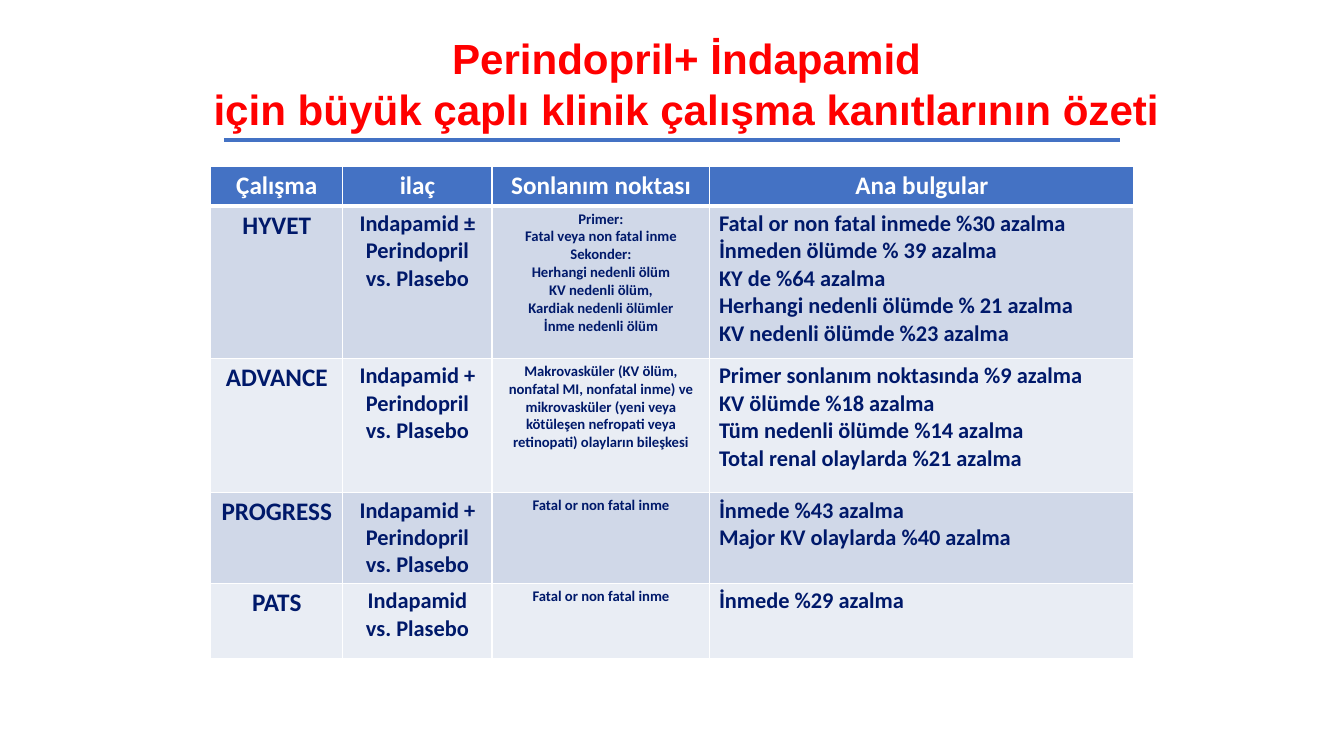
from lxml import etree
from pptx import Presentation, util as u
from pptx.dml.color import RGBColor
from pptx.enum import shapes, text
from pptx.oxml.ns import qn

TITLE = ["Perindopril+ İndapamid", "için büyük çaplı klinik çalışma kanıtlarının özeti"]
HEADER = ["Çalışma", "ilaç", "Sonlanım noktası", "Ana bulgular"]
STUDIES = [
    (["HYVET"],
     ["Indapamid ± Perindopril", "vs. Plasebo"],
     ["Primer:", "Fatal veya non fatal inme", "Sekonder:", "Herhangi nedenli ölüm",
      "KV nedenli ölüm,", "Kardiak nedenli ölümler", "İnme nedenli ölüm"],
     ["Fatal or non fatal inmede %30 azalma", "İnmeden ölümde % 39 azalma",
      "KY de %64 azalma", "Herhangi nedenli ölümde % 21 azalma",
      "KV nedenli ölümde %23 azalma"]),
    (["ADVANCE"],
     ["Indapamid + Perindopril", "vs. Plasebo"],
     ["Makrovasküler (KV ölüm, nonfatal MI, nonfatal inme) ve mikrovasküler "
      "(yeni veya kötüleşen nefropati veya retinopati) olayların bileşkesi"],
     ["Primer sonlanım noktasında %9 azalma", "KV ölümde %18 azalma",
      "Tüm nedenli ölümde %14 azalma", "Total renal olaylarda %21 azalma"]),
    (["PROGRESS"],
     ["Indapamid + Perindopril", "vs. Plasebo"],
     ["Fatal or non fatal inme"],
     ["İnmede %43 azalma", "Major KV olaylarda %40 azalma"]),
    (["PATS"],
     ["Indapamid", "vs. Plasebo"],
     ["Fatal or non fatal inme"],
     ["İnmede %29 azalma"]),
]
COLORS = {"title": "FF0000", "accent": "4472C4", "white": "FFFFFF",
          "navy": "00196A", "odd": "D0D8E8", "even": "E9EDF4"}
COLUMN_WIDTHS = [3.33, 3.76, 5.49, 10.69]
ROW_HEIGHTS = [0.99, 3.84, 3.38, 2.21, 1.91]
BODY_SIZES = [18, 16, 10.5, 16]
CENTER, LEFT = text.PP_ALIGN.CENTER, text.PP_ALIGN.LEFT


def color(name):
    return RGBColor.from_string(COLORS[name])


def write(frame, lines, size, font, ink, align):
    for number, line in enumerate(lines):
        para = frame.add_paragraph() if number else frame.paragraphs[0]
        para.alignment = align
        span = para.add_run()
        span.text = line
        formats = {"size": u.Pt(size), "name": font, "bold": True}
        for key, value in formats.items():
            setattr(span.font, key, value)
        span.font.color.rgb = color(ink)


def add_borders(cell, points):
    properties = cell._tc.get_or_add_tcPr()
    for place, (side, width) in enumerate(points.items()):
        line = etree.Element(qn(f"a:ln{side}"), w=str(u.Pt(width)))
        fill = etree.SubElement(line, qn("a:solidFill"))
        etree.SubElement(fill, qn("a:srgbClr"), val=COLORS["white"])
        properties.insert(place, line)


def add_title(page):
    box = page.shapes.title
    place = {"left": 4.7, "top": 0.69, "width": 25.22, "height": 2.82}
    for key, value in place.items():
        setattr(box, key, u.Cm(value))
    frame = box.text_frame
    frame.word_wrap = True
    frame.auto_size = text.MSO_AUTO_SIZE.NONE
    frame.vertical_anchor = text.MSO_ANCHOR.TOP
    write(frame, TITLE, 30.1, "Arial", "title", CENTER)


def add_rule(page):
    rule = page.shapes.add_connector(
        shapes.MSO_CONNECTOR.STRAIGHT, u.Cm(5.64), u.Cm(3.53), u.Cm(28.22), u.Cm(3.53))
    rule.line.color.rgb = color("accent")
    rule.line.width = u.Pt(3)
    etree.SubElement(rule._element.spPr, qn("a:effectLst"))


def add_studies(page):
    rows = [[[label] for label in HEADER], *STUDIES]
    table = page.shapes.add_table(
        len(rows), len(HEADER), u.Cm(5.31), u.Cm(4.19),
        u.Cm(sum(COLUMN_WIDTHS)), u.Cm(sum(ROW_HEIGHTS))).table
    for column, width in zip(table.columns, COLUMN_WIDTHS):
        column.width = u.Cm(width)
    margins = {"margin_left": 0.23, "margin_right": 0.23,
               "margin_top": 0.11, "margin_bottom": 0.11}
    for r, row in enumerate(rows):
        table.rows[r].height = u.Cm(ROW_HEIGHTS[r])
        shade = "accent" if r == 0 else "odd" if r % 2 else "even"
        borders = {"L": 1, "R": 1, "T": 3 if r == 1 else 1, "B": 3 if r == 0 else 1}
        for c, lines in enumerate(row):
            cell = table.cell(r, c)
            for key, value in margins.items():
                setattr(cell, key, u.Cm(value))
            cell.fill.solid()
            cell.fill.fore_color.rgb = color(shade)
            add_borders(cell, borders)
            write(cell.text_frame, lines, BODY_SIZES[c] if r else 18, "Calibri",
                  "navy" if r else "white", LEFT if r and c == 3 else CENTER)


def main():
    deck = Presentation()
    deck.slide_width, deck.slide_height = u.Cm(33.87), u.Cm(19.05)
    page = deck.slides.add_slide(deck.slide_layouts[5])
    add_studies(page)
    add_title(page)
    add_rule(page)
    deck.save("out.pptx")


if __name__ == "__main__":
    main()
